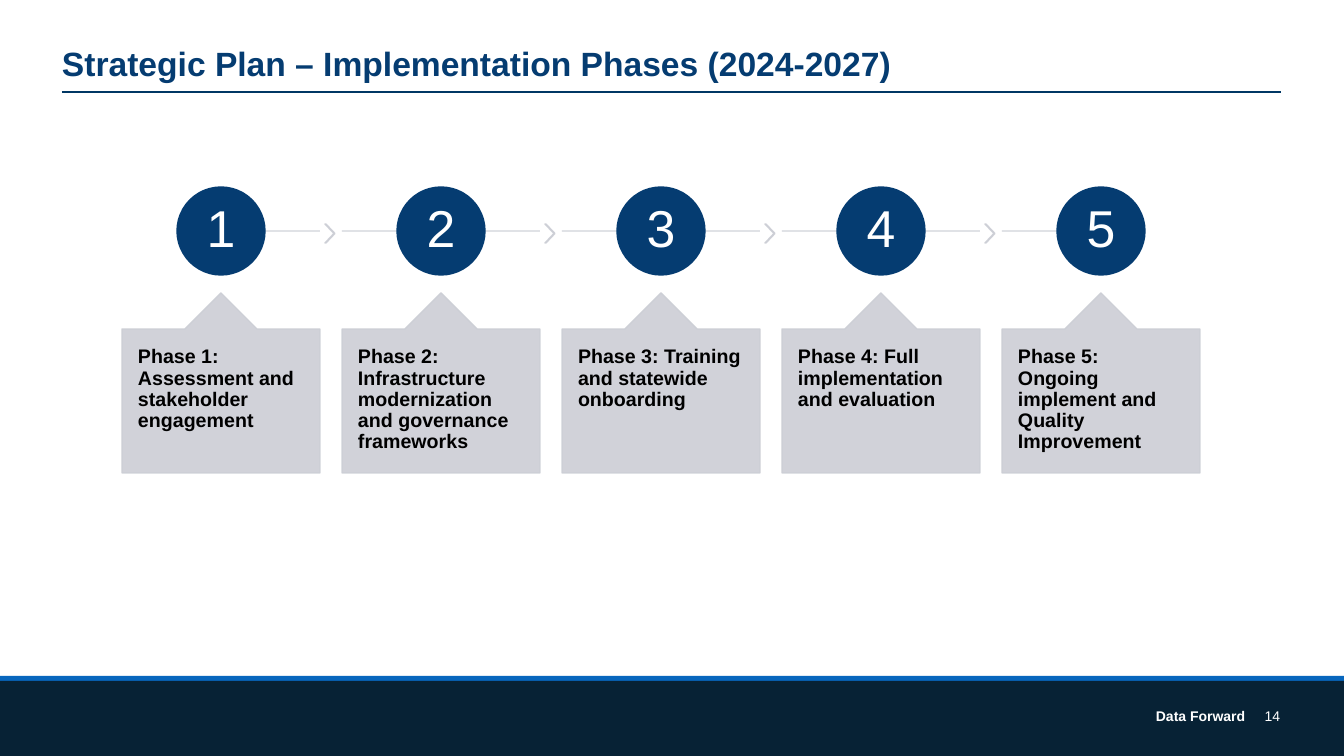
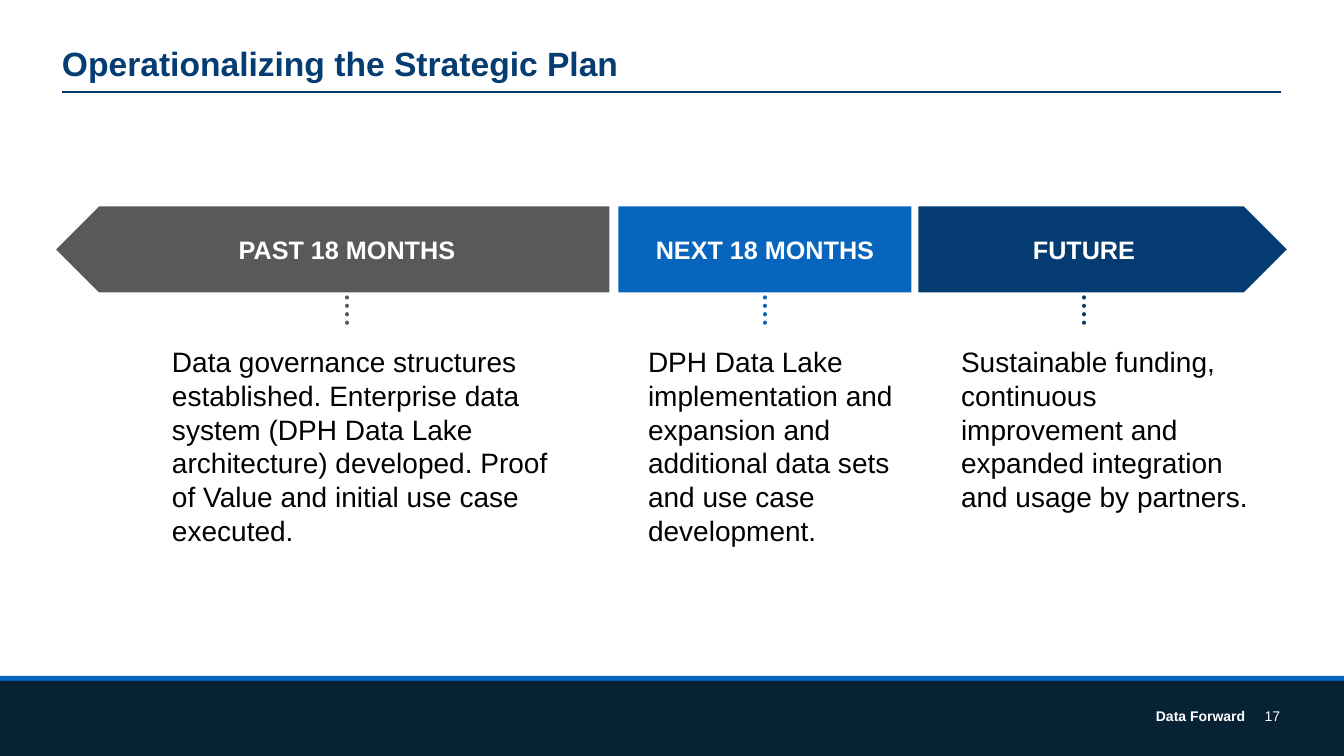
from lxml.etree import SubElement
from pptx import Presentation
from pptx.dml.color import RGBColor
from pptx.enum.dml import MSO_LINE
from pptx.enum.shapes import MSO_CONNECTOR, MSO_SHAPE
from pptx.enum.text import MSO_ANCHOR, PP_ALIGN
from pptx.oxml.ns import qn
from pptx.util import Emu, Pt

W, H = 1344, 756
EMU_PER_PX = 914400 / 100.8
FONT = "Arial"
COLORS = {
    "white": "FFFFFF", "black": "000000", "title": "053C71", "rule": "003764",
    "stripe": "0766BD", "footer": "072235", "card": "CCCED5",
    "past": "595959", "next": "0765BD", "future": "043C72",
}


def px(n):
    return Emu(round(n * EMU_PER_PX))


def rgb(name):
    return RGBColor.from_string(COLORS[name])


def write(shape, text, size, color, bold=False, align=PP_ALIGN.LEFT,
          anchor=MSO_ANCHOR.TOP, insets=(10, 5), spacing=1.0):
    """Fill a shape with one paragraph; insets are (horizontal, vertical)."""
    tf = shape.text_frame
    tf.word_wrap = True
    tf.vertical_anchor = anchor
    tf.margin_left = tf.margin_right = px(insets[0])
    tf.margin_top = tf.margin_bottom = px(insets[1])
    tf.text = text
    p = tf.paragraphs[0]
    p.alignment, p.line_spacing = align, spacing
    p.font.name, p.font.size, p.font.bold = FONT, Pt(size), bold
    p.font.color.rgb = rgb(color)


def add_text(s, box, *args, **kwargs):
    write(s.shapes.add_textbox(*map(px, box)), *args, **kwargs)


def add_box(s, kind, box, fill, line=None, width=1, opacity=100):
    sp = s.shapes.add_shape(kind, *map(px, box))
    sp.shadow.inherit = False
    sp.fill.solid()
    sp.fill.fore_color.rgb = rgb(fill)
    if line:
        sp.line.color.rgb = rgb(line)
        sp.line.width = Pt(width)
    else:
        sp.line.fill.background()
    fade(sp, opacity)
    return sp


def add_line(s, start, end, color, width=1, opacity=100, dotted=False):
    c = s.shapes.add_connector(MSO_CONNECTOR.STRAIGHT, *map(px, start + end))
    c.line.color.rgb = rgb(color)
    c.line.width = Pt(width)
    props = c.element.spPr
    if dotted:
        c.line.dash_style = MSO_LINE.ROUND_DOT
        props.find(qn("a:ln")).set("cap", "rnd")
    SubElement(props, qn("a:effectLst"))
    fade(c, opacity)


def fade(shape, opacity):
    """Set the opacity, in percent, of a shape's fill and line."""
    if opacity < 100:
        for clr in shape.element.spPr.iter(qn("a:srgbClr")):
            SubElement(clr, qn("a:alpha"), val=str(opacity * 1000))


def add_base_slide(prs, title, number):
    """Add a slide with the title, rule and footer that all slides share."""
    s = prs.slides.add_slide(prs.slide_layouts[5])
    add_box(s, MSO_SHAPE.RECTANGLE, (0, 676, W, 80), "stripe")
    add_box(s, MSO_SHAPE.RECTANGLE, (0, 681, W, 75), "footer")
    add_text(s, (1129, 696, 151, 40), number, 10, "white", align=PP_ALIGN.RIGHT,
             anchor=MSO_ANCHOR.MIDDLE, insets=(0, 0))
    add_text(s, (932, 703, 323, 27), "Data Forward", 10, "white", bold=True,
             align=PP_ALIGN.RIGHT)
    add_line(s, (62, 92), (1281, 92), "rule")
    t = s.shapes.title
    t.left, t.top, t.width, t.height = map(px, (52, 42, 1252, 81))
    write(t, title, 24, "title", bold=True, spacing=0.9)
    return s


def add_phase(s, box, number, text, first, last):
    """Place a numbered circle on the track and its callout below."""
    x, y, w, h = box
    middle, track_y, diameter, callout_top = x + w // 2, y + 44, 88, 106
    add_line(s, (middle if first else x, track_y),
             (middle if last else x + w, track_y), "card", opacity=90)
    if not last:
        chevron = add_box(s, MSO_SHAPE.CHEVRON, (x + w + 5, y + 37, 10, 19),
                          "card", "card", opacity=90)
        chevron.adjustments[0] = 0.9
    circle = add_box(s, MSO_SHAPE.OVAL,
                     (middle - diameter // 2, y, diameter, diameter),
                     "title", "title")
    write(circle, str(number), 37, "white", align=PP_ALIGN.CENTER,
          anchor=MSO_ANCHOR.MIDDLE, insets=(3, 3), spacing=0.9)
    callout = add_box(s, MSO_SHAPE.UP_ARROW_CALLOUT,
                      (x, y + callout_top, w, h - callout_top),
                      "card", "card", opacity=90)
    for i, value in enumerate((0.5, 0.2, 0.2, 1)):
        callout.adjustments[i] = value
    write(callout, text, 14, "black", bold=True, insets=(16, 18), spacing=0.9)


def add_phases(s, box, phases):
    x, y, w, h = box
    gap = 22
    card_w = (w - gap * (len(phases) - 1)) // len(phases)
    for i, text in enumerate(phases):
        add_phase(s, (x + i * (card_w + gap), y, card_w, h), i + 1,
                  f"Phase {i + 1}: {text}", i == 0, i == len(phases) - 1)


def add_period(s, box, color, label, axis, text, text_x, text_w, flip=False):
    """Place an arrow band with its label and dotted stem at axis, text below."""
    x, y, w, h = box
    band = add_box(s, MSO_SHAPE.PENTAGON, box, color, "white", 5)
    if flip:
        band.element.spPr.find(qn("a:xfrm")).set("flipH", "1")
    label_w = 308
    add_text(s, (axis - label_w // 2, y + 26, label_w, 40), label, 18, "white",
             bold=True, align=PP_ALIGN.CENTER)
    add_line(s, (axis, y + 86), (axis, y + 128), color, 3, dotted=True)
    add_text(s, (text_x, y + 137, text_w, 214), text, 20, "black")


def add_periods(s, top, height):
    periods = [
        (51, 562, "past", "PAST 18 MONTHS", 347,
         "Data governance structures established. Enterprise data system "
         "(DPH Data Lake architecture) developed. Proof of Value and initial "
         "use case executed.", 162, 418, True),
        (615, 357, "next", "NEXT 18 MONTHS", 765,
         "DPH Data Lake implementation and expansion and additional data sets "
         "and use case development.", 638, 271),
        (915, 377, "future", "FUTURE", 1084,
         "Sustainable funding, continuous improvement and expanded "
         "integration and usage by partners.", 951, 325),
    ]
    for x, w, *details in periods:
        add_period(s, (x, top, w, height), *details)


def main():
    prs = Presentation()
    prs.slide_width, prs.slide_height = px(W), px(H)

    s = add_base_slide(prs, "Strategic Plan – Implementation Phases (2024-2027)", "14")
    add_phases(s, (122, 187, 1078, 286), [
        "Assessment and stakeholder engagement",
        "Infrastructure modernization and governance frameworks",
        "Training and statewide onboarding",
        "Full implementation and evaluation",
        "Ongoing implement and Quality Improvement",
    ])

    s = add_base_slide(prs, "Operationalizing the Strategic Plan", "17")
    add_periods(s, 203, 93)

    prs.save("out.pptx")


if __name__ == "__main__":
    main()
